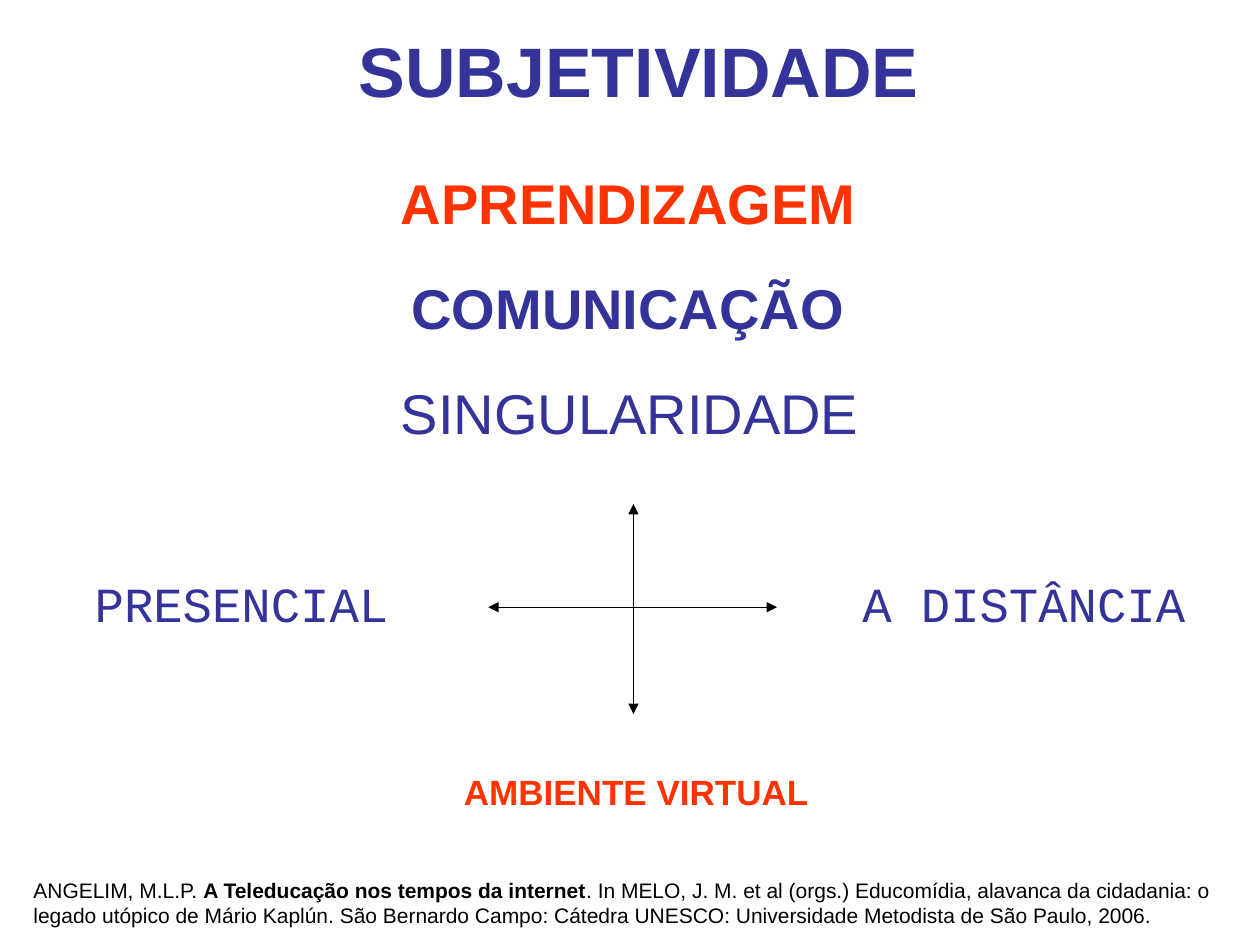
"""Build the slide on subjectivity, learning and communication."""
from lxml import etree
from pptx import Presentation
from pptx.dml.color import RGBColor
from pptx.enum import shapes, text
from pptx.oxml import ns
from pptx.util import Pt

BLUE = RGBColor(0x33, 0x33, 0x99)
ORANGE = RGBColor(0xFF, 0x33, 0x00)
BLACK = RGBColor(0x00, 0x00, 0x00)
LEFT, CENTER = text.PP_ALIGN.LEFT, text.PP_ALIGN.CENTER

presentation = Presentation()
presentation.slide_width, presentation.slide_height = Pt(720), Pt(540)
slide = presentation.slides.add_slide(presentation.slide_layouts[6])


def add_text(box, runs, alignment, font_values):
    shape = slide.shapes.add_textbox(*map(Pt, box))
    shape.text_frame.word_wrap = True
    paragraph = shape.text_frame.paragraphs[0]
    paragraph.alignment = alignment
    for wording, bold, color in runs:
        run = paragraph.add_run()
        run.text = wording
        run.font.color.rgb = color
        for name, value in {**font_values, "bold": bold}.items():
            setattr(run.font, name, value)


reference = [
    ("ANGELIM, M.L.P. ", False, BLACK),
    ("A Teleducação nos tempos da internet", True, BLACK),
    (". In MELO, J. M. et al (orgs.) Educomídia, alavanca da cidadania: o legado "
     "utópico de Mário Kaplún. São Bernardo Campo: Cátedra UNESCO: Universidade "
     "Metodista de São Paulo, 2006.", False, BLACK),
]
add_text((12, 498, 696, 36), reference, LEFT, {"name": "Arial", "size": Pt(12)})

labels = [
    ("SUBJETIVIDADE", (198, 12, 336, 55.5), 40, "Arial", True, BLUE, LEFT),
    ("APRENDIZAGEM", (222, 92.5, 276, 45.5), 32, "Arial", True, ORANGE, LEFT),
    ("COMUNICAÇÃO", (228, 152.5, 276, 45.5), 32, "Arial", True, BLUE, LEFT),
    ("SINGULARIDADE", (222, 212.5, 276, 45.5), 32, "Arial", False, BLUE, LEFT),
    ("AMBIENTE VIRTUAL", (258, 437, 216, 31), 20, "Arial", True, ORANGE, LEFT),
    ("PRESENCIAL", (36, 324, 204, 41), 28, "Courier New", False, BLUE, CENTER),
    ("A DISTÂNCIA", (474, 324, 222, 41), 28, "Courier New", False, BLUE, CENTER),
]
for wording, box, size, font_name, bold, color, alignment in labels:
    add_text(box, [(wording, bold, color)], alignment,
             {"name": font_name, "size": Pt(size)})

axes = [(362, 288, 362, 408), (279, 347, 444, 347)]
for ends in axes:
    axis = slide.shapes.add_connector(shapes.MSO_CONNECTOR.STRAIGHT, *map(Pt, ends))
    axis.line.color.rgb = BLACK
    axis.line.width = Pt(0.75)
    properties = axis.element.spPr
    line = properties.find(ns.qn("a:ln"))
    for tag in ("a:headEnd", "a:tailEnd"):
        etree.SubElement(line, ns.qn(tag), type="triangle")
    etree.SubElement(properties, ns.qn("a:effectLst"))

presentation.save("out.pptx")
